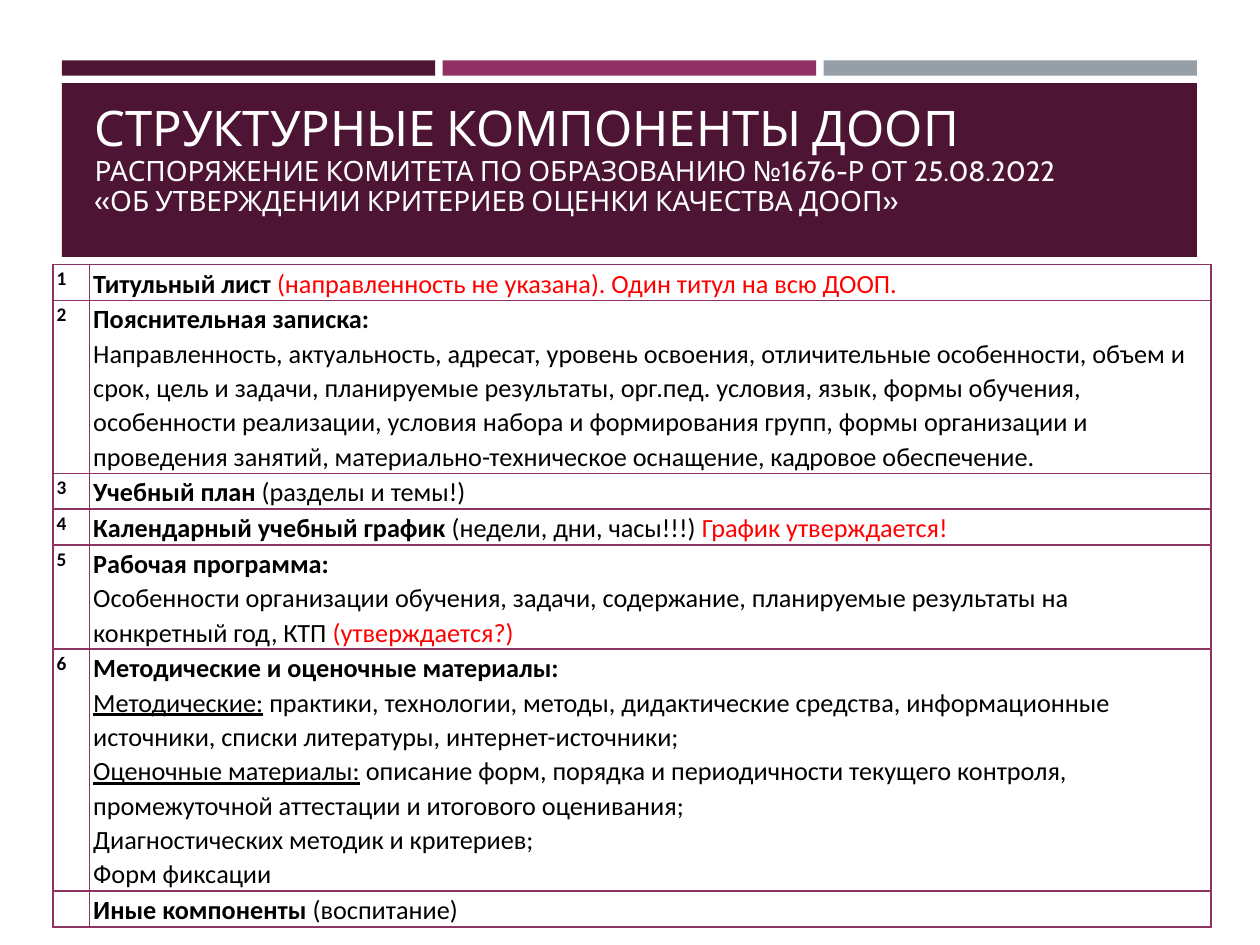
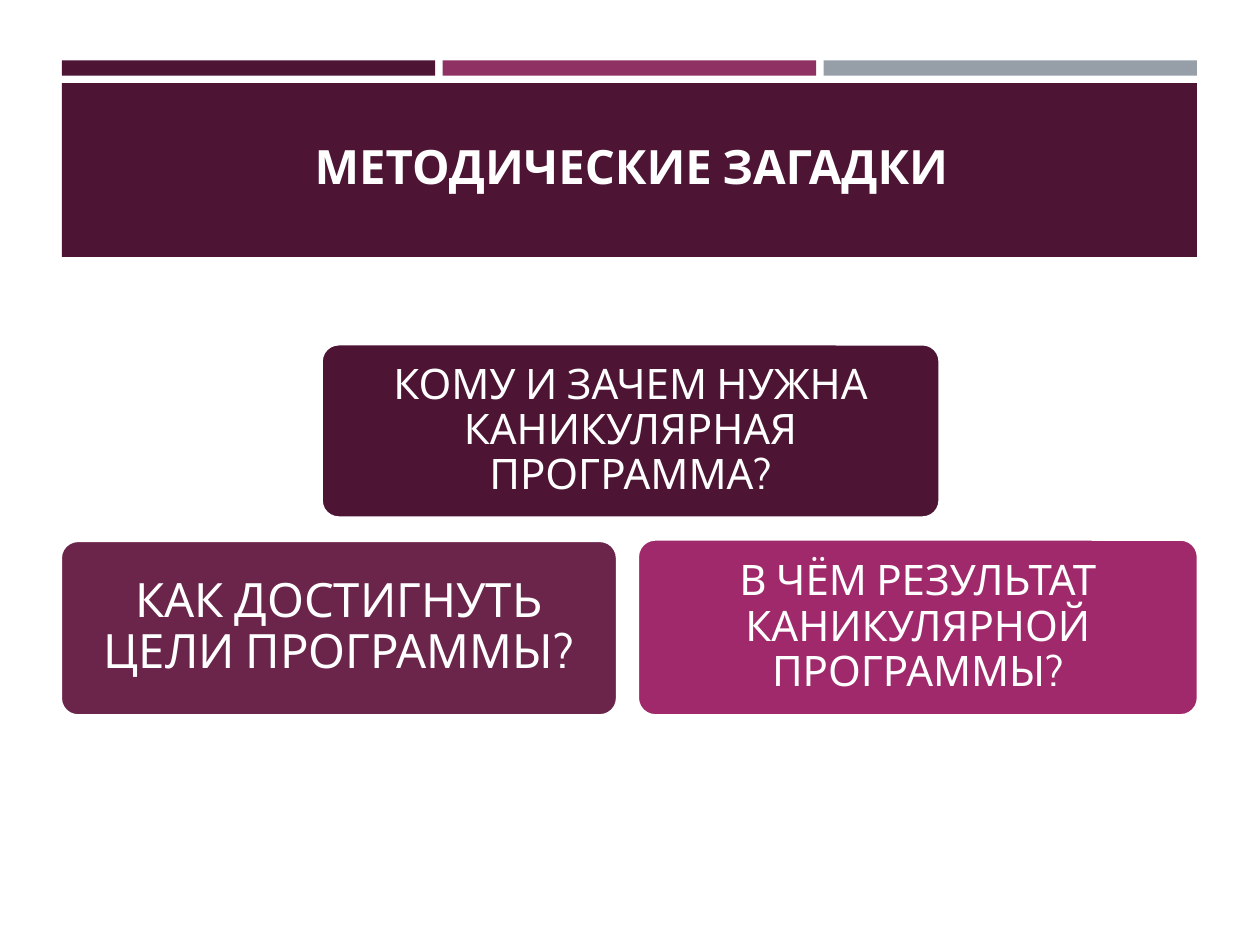
"""Build two slides on the structure and riddles of educational programmes."""
import pptx
import pptx.dml.color
import pptx.enum.shapes
import pptx.enum.text
import pptx.oxml.ns
import pptx.util
from dataclasses import dataclass
from lxml import etree

Inches = pptx.util.Inches
Pt = pptx.util.Pt
Anchor = pptx.enum.text.MSO_ANCHOR
Align = pptx.enum.text.PP_ALIGN
Shapes = pptx.enum.shapes.MSO_SHAPE
qn = pptx.oxml.ns.qn


@dataclass(frozen=True)
class Theme:
    """Colours, fonts and type sizes."""
    plum: str = "4D1434"
    berry: str = "903163"
    grey: str = "969FA7"
    mulberry: str = "6C254A"
    magenta: str = "9F296B"
    white: str = "FFFFFF"
    black: str = "000000"
    red: str = "FF0000"
    display_font: str = "Cabin"
    table_font: str = "Calibri"
    title_size: int = 28
    subtitle_size: int = 16
    large_size: int = 27
    card_size: int = 24
    cell_size: int = 15
    number_size: int = 11


THEME = Theme()

STRUCTURE_TITLE = [
    ("СТРУКТУРНЫЕ КОМПОНЕНТЫ ДООП", THEME.title_size),
    ("РАСПОРЯЖЕНИЕ КОМИТЕТА ПО ОБРАЗОВАНИЮ №1676-Р ОТ 25.08.2022", THEME.subtitle_size),
    ("«ОБ УТВЕРЖДЕНИИ КРИТЕРИЕВ ОЦЕНКИ КАЧЕСТВА ДООП»", THEME.subtitle_size),
]

RUN_STYLES = {
    "bold": {"bold": True},
    "plain": {},
    "underlined": {"underline": True},
    "red": {"color": THEME.red},
}

COMPONENTS = [
    ("1", 0.28, [
        [("Титульный лист ", "bold"),
         ("(направленность не указана). Один титул на всю ДООП.", "red")],
    ]),
    ("2", 1.23, [
        [("Пояснительная записка:", "bold")],
        [("Направленность, актуальность, адресат, уровень освоения, отличительные "
          "особенности, объем и срок, цель и задачи, планируемые результаты, орг.пед. "
          "условия, язык, формы обучения, особенности реализации, условия набора и "
          "формирования групп, формы организации и проведения занятий, "
          "материально-техническое оснащение, кадровое обеспечение.", "plain")],
    ]),
    ("3", 0.28, [[("Учебный план", "bold"), (" (разделы и темы!)", "plain")]]),
    ("4", 0.28, [
        [("Календарный учебный график", "bold"),
         (" (недели, дни, часы!!!) ", "plain"),
         ("График утверждается!", "red")],
    ]),
    ("5", 0.74, [
        [("Рабочая программа:", "bold")],
        [("Особенности организации обучения, задачи, содержание, планируемые "
          "результаты на конкретный год, КТП ", "plain"),
         ("(утверждается?)", "red")],
    ]),
    ("6", 1.71, [
        [("Методические и оценочные материалы:", "bold")],
        [("Методические:", "underlined"),
         (" практики, технологии, методы, дидактические средства, информационные "
          "источники, списки литературы, интернет-источники;", "plain")],
        [("Оценочные материалы:", "underlined"),
         (" описание форм, порядка и периодичности текущего контроля, промежуточной "
          "аттестации и итогового оценивания;", "plain")],
        [("Диагностических методик и критериев;", "plain")],
        [("Форм фиксации", "plain")],
    ]),
    ("", 0.28, [[("Иные компоненты", "bold"), (" (воспитание)", "plain")]]),
]

RIDDLES_TITLE = "МЕТОДИЧЕСКИЕ ЗАГАДКИ"
RIDDLES = [
    ("КОМУ И ЗАЧЕМ НУЖНА КАНИКУЛЯРНАЯ ПРОГРАММА?", THEME.plum, THEME.card_size,
     (2.55, 2.73, 4.91, 1.38)),
    ("В ЧЁМ РЕЗУЛЬТАТ КАНИКУЛЯРНОЙ ПРОГРАММЫ?", THEME.magenta, THEME.card_size,
     (5.06, 4.28, 4.45, 1.4)),
    ("КАК ДОСТИГНУТЬ ЦЕЛИ ПРОГРАММЫ?", THEME.mulberry, THEME.large_size,
     (0.48, 4.29, 4.42, 1.39)),
]

BAND_LEFT, BAND_WIDTH, STRIPE_GAP = 0.49, 9.01, 0.06
TABLE_LEFT, TABLE_TOP, COLUMN_WIDTHS = 0.42, 2.1, (0.29, 8.9)


def rgb(color):
    return pptx.dml.color.RGBColor.from_string(color)


def add_run(paragraph, text, size, color=THEME.white, font=THEME.display_font,
            bold=False, underline=False):
    run = paragraph.add_run()
    run.text = text
    run.font.name = font
    run.font.size = Pt(size)
    run.font.bold = bold
    run.font.underline = underline
    run.font.color.rgb = rgb(color)


def add_box(slide, kind, box, fill):
    shape = slide.shapes.add_shape(kind, *map(Inches, box))
    shape.shadow.inherit = False
    shape.fill.solid()
    shape.fill.fore_color.rgb = rgb(fill)
    shape.line.fill.background()
    return shape


def add_bands(layout, slide):
    """Draw the header bands and hand them to the layout, for every slide to share."""
    colors = (THEME.plum, THEME.berry, THEME.grey)
    width = (BAND_WIDTH - STRIPE_GAP * (len(colors) - 1)) / len(colors)
    bands = [((BAND_LEFT + index * (width + STRIPE_GAP), 0.48, width, 0.12), color)
             for index, color in enumerate(colors)]
    bands.append(((BAND_LEFT, 0.66, BAND_WIDTH, 1.38), THEME.plum))
    for box, color in bands:
        band = add_box(slide, Shapes.RECTANGLE, box, color)
        layout.shapes.element.append(band.element)


def place_title(slide, left, top, anchor, alignment):
    title = slide.shapes.title
    title.left, title.top, title.width, title.height = map(Inches, (left, top, 8.74, 1.18))
    frame = title.text_frame
    frame.auto_size = pptx.enum.text.MSO_AUTO_SIZE.NONE
    frame.word_wrap = True
    frame.vertical_anchor = anchor
    paragraph = frame.paragraphs[0]
    paragraph.alignment = alignment
    paragraph.line_spacing = 0.9
    return paragraph


def format_cell(cell):
    cell.margin_left = cell.margin_right = Inches(0.03)
    cell.margin_top, cell.margin_bottom = Inches(0.01), 0
    properties = cell._tc.get_or_add_tcPr()
    for side in ("a:lnL", "a:lnR", "a:lnT", "a:lnB"):
        border = etree.SubElement(properties, qn(side), w=str(Pt(1)))
        fill = etree.SubElement(border, qn("a:solidFill"))
        etree.SubElement(fill, qn("a:srgbClr"), val=THEME.berry)
    cell.fill.background()


def fill_cell(cell, paragraphs, size):
    format_cell(cell)
    frame = cell.text_frame
    for index, runs in enumerate(paragraphs):
        paragraph = frame.add_paragraph() if index else frame.paragraphs[0]
        paragraph.line_spacing = 1.07
        for text, style in runs:
            options = {"color": THEME.black, **RUN_STYLES[style]}
            add_run(paragraph, text, size, font=THEME.table_font, **options)
        if not runs:
            etree.SubElement(paragraph._p, qn("a:endParaRPr"), sz=str(size * 100))


def build_structure(slide):
    paragraph = place_title(slide, 0.65, 0.6, Anchor.BOTTOM, Align.LEFT)
    for index, (text, size) in enumerate(STRUCTURE_TITLE):
        if index:
            paragraph.add_line_break()
        add_run(paragraph, text, size)

    height = sum(row_height for _, row_height, _ in COMPONENTS)
    table = slide.shapes.add_table(
        len(COMPONENTS), len(COLUMN_WIDTHS), Inches(TABLE_LEFT), Inches(TABLE_TOP),
        Inches(sum(COLUMN_WIDTHS)), Inches(height)).table
    table.first_row = table.horz_banding = False
    for column, width in zip(table.columns, COLUMN_WIDTHS):
        column.width = Inches(width)
    for index, (number, row_height, paragraphs) in enumerate(COMPONENTS):
        table.rows[index].height = Inches(row_height)
        number_runs = [(number, "bold")] if number else []
        fill_cell(table.cell(index, 0), [number_runs], THEME.number_size)
        fill_cell(table.cell(index, 1), paragraphs, THEME.cell_size)


def build_riddles(slide):
    paragraph = place_title(slide, 0.64, 0.75, Anchor.MIDDLE, Align.CENTER)
    add_run(paragraph, RIDDLES_TITLE, THEME.large_size, bold=True)
    for text, color, size, box in RIDDLES:
        card = add_box(slide, Shapes.ROUNDED_RECTANGLE, box, color)
        card.adjustments[0] = 0.1
        card.line.color.rgb = rgb(THEME.white)
        card.line.width = Pt(1.75)
        frame = card.text_frame
        frame.word_wrap = True
        frame.vertical_anchor = Anchor.MIDDLE
        frame.margin_left = frame.margin_right = Inches(0.1)
        frame.margin_top = frame.margin_bottom = Inches(0.1)
        paragraph = frame.paragraphs[0]
        paragraph.alignment = Align.CENTER
        paragraph.line_spacing = 0.9
        add_run(paragraph, text, size)


def main():
    presentation = pptx.Presentation()
    presentation.slide_width, presentation.slide_height = Inches(10), Inches(7.5)
    layout = presentation.slide_layouts.get_by_name("Title Only")
    structure, riddles = (presentation.slides.add_slide(layout) for _ in range(2))
    add_bands(layout, structure)
    build_structure(structure)
    build_riddles(riddles)
    presentation.save("out.pptx")


if __name__ == "__main__":
    main()
